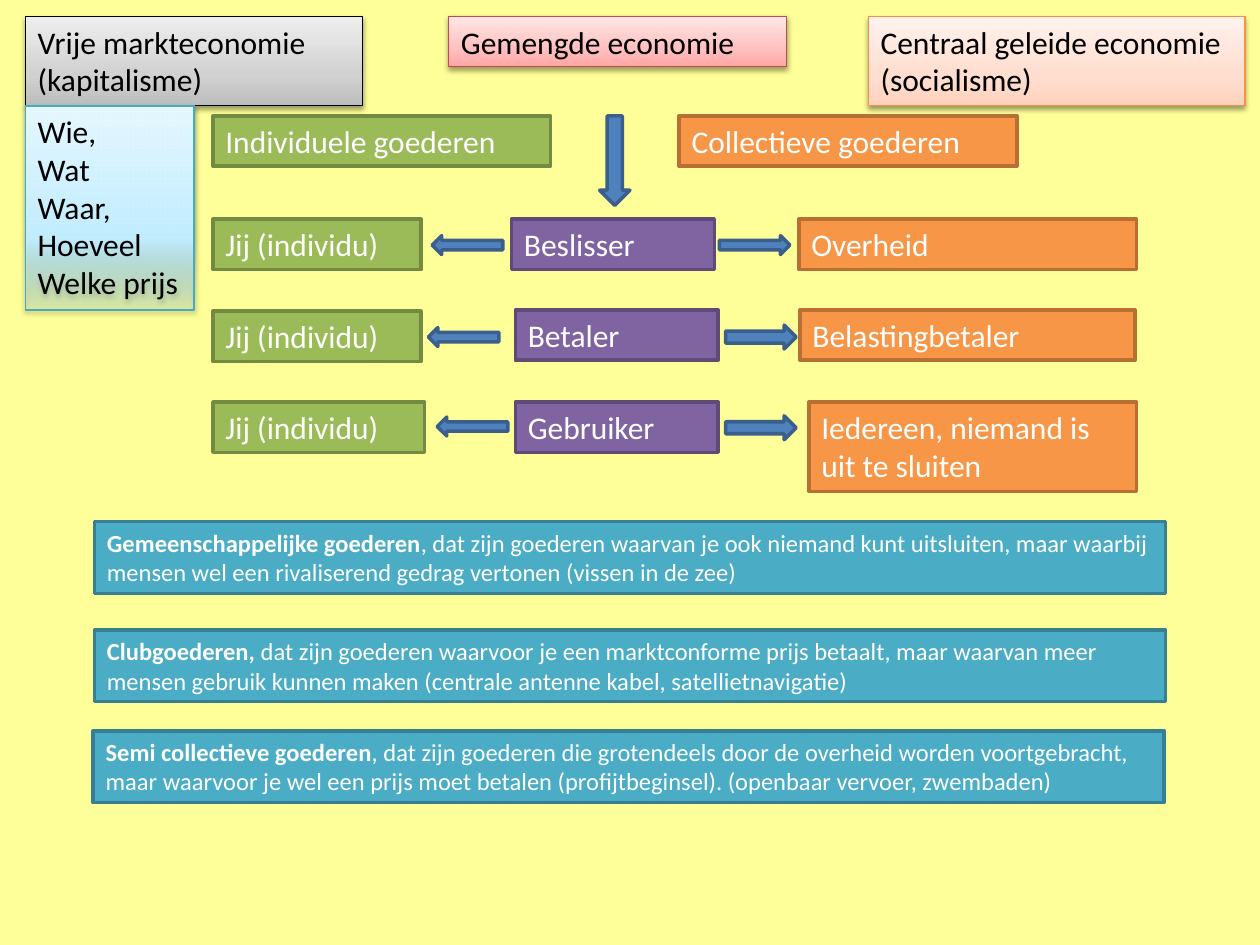
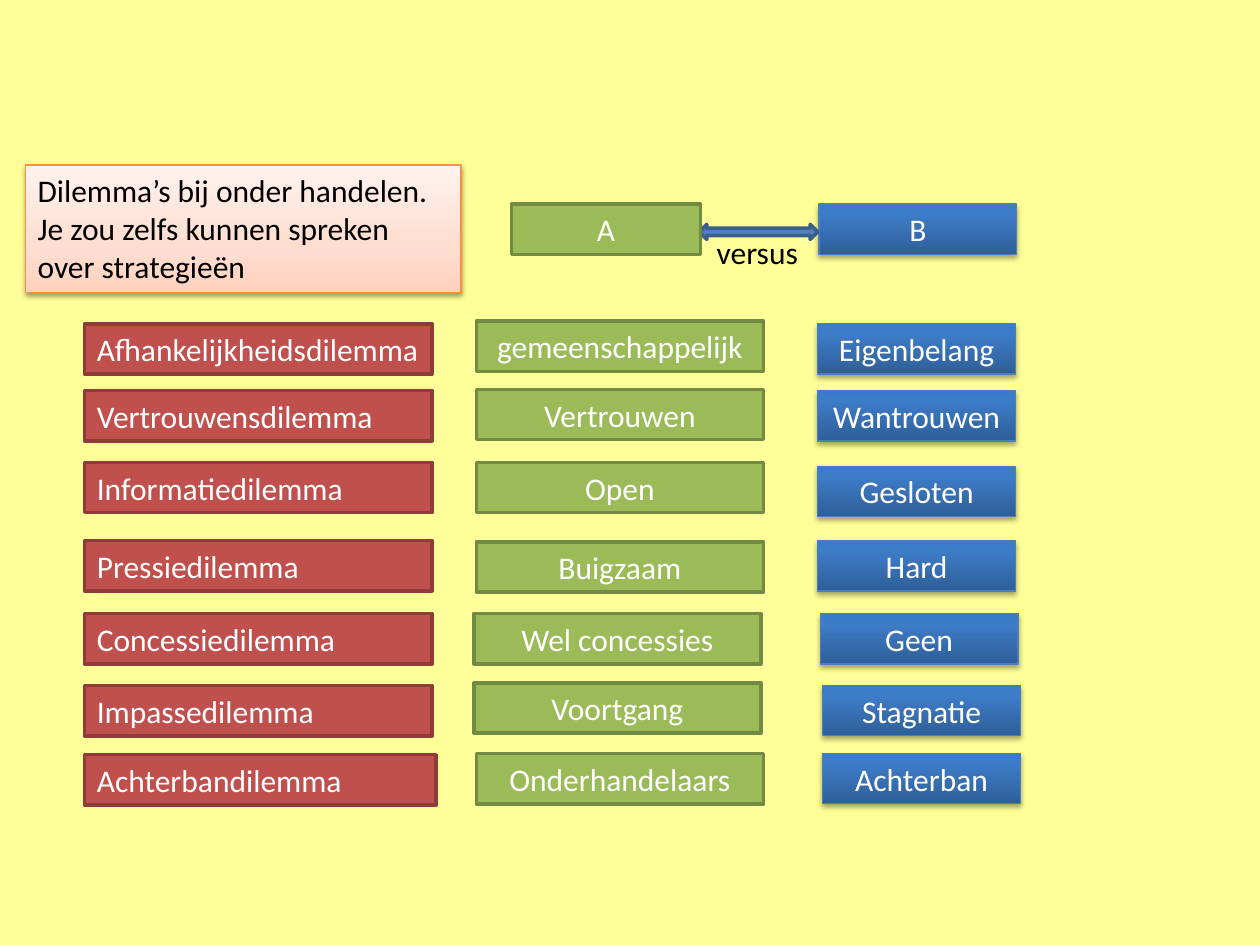
from dataclasses import dataclass

from pptx import Presentation
from pptx.dml.color import RGBColor
from pptx.enum.shapes import MSO_SHAPE
from pptx.enum.text import MSO_ANCHOR, MSO_AUTO_SIZE, PP_ALIGN
from pptx.oxml import parse_xml
from pptx.oxml.ns import nsdecls, qn
from pptx.util import Inches, Pt


@dataclass(frozen=True)
class Style:
    fill: str | tuple
    line: str
    text: str = "FFFFFF"
    line_width: float = 2
    shadow_alpha: int = 0
    shadow_distance: float = 1.6


@dataclass(frozen=True)
class Theme:
    font: str = "Calibri"
    background: str = "FFFF99"
    dark: str = "000000"
    body: int = 18
    small: int = 14
    green: Style = Style("9BBB59", "738A42")
    orange: Style = Style("F79646", "B76F34")
    purple: Style = Style("8064A2", "5F4A78")
    red: Style = Style("C0504D", "8E3B39")
    teal: Style = Style("4BACC6", "377F92")
    arrow: Style = Style("4F81BD", "3A5F8C")
    grey_fade: Style = Style(((0, "BDBDBD", 100), (35, "D1D1D1", 100), (100, "EEEEEE", 100)),
                             "000000", "000000", 0.75, 38)
    pink_fade: Style = Style(((0, "FFA6A5", 100), (35, "FFC0BF", 100), (100, "FFE7E7", 100)),
                             "BF4C48", "000000", 0.75, 38)
    peach_fade: Style = Style(((0, "FFD2BD", 100), (35, "FFDED0", 100), (100, "FFF2ED", 100)),
                              "F69240", "000000", 0.75, 38)
    sky_fade: Style = Style(((0, "A7E6FF", 18), (35, "C1EDFF", 100), (100, "E7F8FF", 100)),
                            "46AAC5", "000000", 0.75, 38)
    blue_fade: Style = Style(((0, "2F5F99", 100), (80, "3D7CC7", 100), (100, "3A7CCB", 100)),
                             "4B7EBC", "FFFFFF", 0.75, 35, 1.8)


theme = Theme()


def add_text(shape, text, color, size=theme.body, align=PP_ALIGN.LEFT, bold_lead=""):
    frame = shape.text_frame
    frame.word_wrap = True
    frame.auto_size = MSO_AUTO_SIZE.SHAPE_TO_FIT_TEXT
    frame.vertical_anchor = MSO_ANCHOR.TOP
    for index, line in enumerate(text.split("\n")):
        paragraph = frame.add_paragraph() if index else frame.paragraphs[0]
        paragraph.alignment = align
        for part, bold in ((bold_lead, True), (line, False)):
            if part:
                run = paragraph.add_run()
                run.text = part
                run.font.name = theme.font
                run.font.size = Pt(size)
                run.font.bold = bold
                run.font.color.rgb = RGBColor.from_string(color)


def add_block(slide, place, style, text="", kind=MSO_SHAPE.RECTANGLE, **text_format):
    shape = slide.shapes.add_shape(kind, *map(Inches, place))
    shape.line.color.rgb = RGBColor.from_string(style.line)
    shape.line.width = Pt(style.line_width)
    shape.shadow.inherit = False
    properties = shape.element.spPr
    if isinstance(style.fill, str):
        shape.fill.solid()
        shape.fill.fore_color.rgb = RGBColor.from_string(style.fill)
    else:
        shape.fill.gradient()
        stops = "".join(
            f'<a:gs pos="{position * 1000}"><a:srgbClr val="{color}">'
            f'<a:alpha val="{alpha * 1000}"/></a:srgbClr></a:gs>'
            for position, color, alpha in style.fill)
        properties.replace(properties.find(qn("a:gradFill")), parse_xml(
            f'<a:gradFill {nsdecls("a")} rotWithShape="1"><a:gsLst>{stops}</a:gsLst>'
            '<a:lin ang="16200000" scaled="0"/></a:gradFill>'))
    if style.shadow_alpha:
        properties.find(qn("a:effectLst")).append(parse_xml(
            f'<a:outerShdw {nsdecls("a")} blurRad="{Pt(3.1)}" '
            f'dist="{Pt(style.shadow_distance)}" dir="5400000" rotWithShape="0">'
            f'<a:srgbClr val="{theme.dark}"><a:alpha val="{style.shadow_alpha * 1000}"/>'
            '</a:srgbClr></a:outerShdw>'))
    if text:
        add_text(shape, text, style.text, **text_format)
    return shape


presentation = Presentation()
presentation.slide_width = Inches(10)
presentation.slide_height = Inches(7.5)
slides = [presentation.slides.add_slide(presentation.slide_layouts[6]) for _ in range(2)]
for slide in slides:
    slide.background.fill.solid()
    slide.background.fill.fore_color.rgb = RGBColor.from_string(theme.background)
economy_slide, dilemma_slide = slides

row_height = 0.4
add_block(economy_slide, (1.69, 0.92, 2.68, row_height), theme.green, "Individuele goederen")
add_block(economy_slide, (5.39, 0.92, 2.68, row_height), theme.orange, "Collectieve goederen")
add_block(economy_slide, (4.76, 0.92, 0.24, 0.71), theme.arrow, kind=MSO_SHAPE.DOWN_ARROW)

roles = [
    ("Beslisser", 4.06, 1.74, (1.69, 1.74, 1.65, row_height),
     "Overheid", (6.34, 1.74, 2.68, row_height),
     (3.43, 1.87, 0.56, 0.15), (5.71, 1.87, 0.56, 0.15)),
    ("Betaler", 4.09, 2.46, (1.69, 2.47, 1.65, row_height),
     "Belastingbetaler", (6.35, 2.46, 2.66, row_height),
     (3.4, 2.6, 0.56, 0.15), (5.76, 2.58, 0.56, 0.19)),
    ("Gebruiker", 4.09, 3.19, (1.69, 3.19, 1.68, row_height),
     "Iedereen, niemand is uit te sluiten", (6.42, 3.19, 2.6, 0.71),
     (3.47, 3.31, 0.56, 0.15), (5.76, 3.3, 0.56, 0.19)),
]
for role, left, top, individual, collective, public, left_arrow, right_arrow in roles:
    add_block(economy_slide, (left, top, 1.61, row_height), theme.purple, role)
    add_block(economy_slide, individual, theme.green, "Jij (individu)")
    add_block(economy_slide, public, theme.orange, collective)
    add_block(economy_slide, right_arrow, theme.arrow, kind=MSO_SHAPE.RIGHT_ARROW)
    arrow = add_block(economy_slide, left_arrow, theme.arrow, kind=MSO_SHAPE.RIGHT_ARROW)
    arrow.rotation = 180

goods = [
    (0.75, 4.14, "Gemeenschappelijke goederen",
     ", dat zijn goederen waarvan je ook niemand kunt uitsluiten, maar waarbij mensen wel "
     "een rivaliserend gedrag vertonen (vissen in de zee)"),
    (0.75, 5, "Clubgoederen, ",
     "dat zijn goederen waarvoor je een marktconforme prijs betaalt, maar waarvan meer "
     "mensen gebruik kunnen maken (centrale antenne kabel, satellietnavigatie)"),
    (0.74, 5.8, "Semi collectieve goederen",
     ", dat zijn goederen die grotendeels door de overheid worden voortgebracht, maar "
     "waarvoor je wel een prijs moet betalen (profijtbeginsel). (openbaar vervoer, zwembaden)"),
]
for left, top, name, definition in goods:
    add_block(economy_slide, (left, top, 8.5, 0.57), theme.teal, definition,
              size=theme.small, bold_lead=name)

systems = [
    ((0.2, 0.13, 2.68, 0.71), theme.grey_fade, "Vrije markteconomie (kapitalisme)"),
    ((3.56, 0.13, 2.68, row_height), theme.pink_fade, "Gemengde economie"),
    ((6.89, 0.13, 2.99, 0.71), theme.peach_fade, "Centraal geleide economie (socialisme)"),
    ((0.2, 0.84, 1.34, 1.62), theme.sky_fade, "Wie,\nWat\nWaar, Hoeveel\nWelke prijs"),
]
for place, style, text in systems:
    add_block(economy_slide, place, style, text)

add_block(dilemma_slide, (0.2, 1.31, 3.46, 1.01), theme.peach_fade,
          "Dilemma’s bij onder handelen. Je zou zelfs kunnen spreken over strategieën")
add_block(dilemma_slide, (6.5, 1.62, 1.57, row_height), theme.blue_fade, "B",
          align=PP_ALIGN.CENTER)
add_block(dilemma_slide, (5.55, 1.78, 0.94, 0.12), theme.arrow,
          kind=MSO_SHAPE.LEFT_RIGHT_ARROW)
versus = dilemma_slide.shapes.add_textbox(*map(Inches, (5.59, 1.8, 0.94, row_height)))
add_text(versus, "versus", theme.dark)
add_block(dilemma_slide, (4.06, 1.62, 1.5, row_height), theme.green, "A",
          align=PP_ALIGN.CENTER)

dilemmas = [
    ("Afhankelijkheidsdilemma", 2.57, 2.76, "gemeenschappelijk", 3.78, 2.55,
     "Eigenbelang", 6.49, 2.57),
    ("Vertrouwensdilemma", 3.1, 2.76, "Vertrouwen", 3.78, 3.09, "Wantrouwen", 6.49, 3.1),
    ("Informatiedilemma", 3.67, 2.76, "Open", 3.78, 3.67, "Gesloten", 6.49, 3.7),
    ("Pressiedilemma", 4.29, 2.76, "Buigzaam", 3.78, 4.3, "Hard", 6.49, 4.29),
    ("Concessiedilemma", 4.87, 2.76, "Wel concessies", 3.76, 4.87, "Geen", 6.51, 4.87),
    ("Impassedilemma", 5.44, 2.76, "Voortgang", 3.76, 5.42, "Stagnatie", 6.53, 5.44),
    ("Achterbandilemma", 5.99, 2.79, "Onderhandelaars", 3.78, 5.98, "Achterban", 6.53, 5.98),
]
for dilemma, top, width, choice_a, a_left, a_top, choice_b, b_left, b_top in dilemmas:
    add_block(dilemma_slide, (0.67, top, width, row_height), theme.red, dilemma)
    add_block(dilemma_slide, (a_left, a_top, 2.28, row_height), theme.green, choice_a,
              align=PP_ALIGN.CENTER)
    add_block(dilemma_slide, (b_left, b_top, 1.57, row_height), theme.blue_fade, choice_b,
              align=PP_ALIGN.CENTER)

presentation.save("out.pptx")
